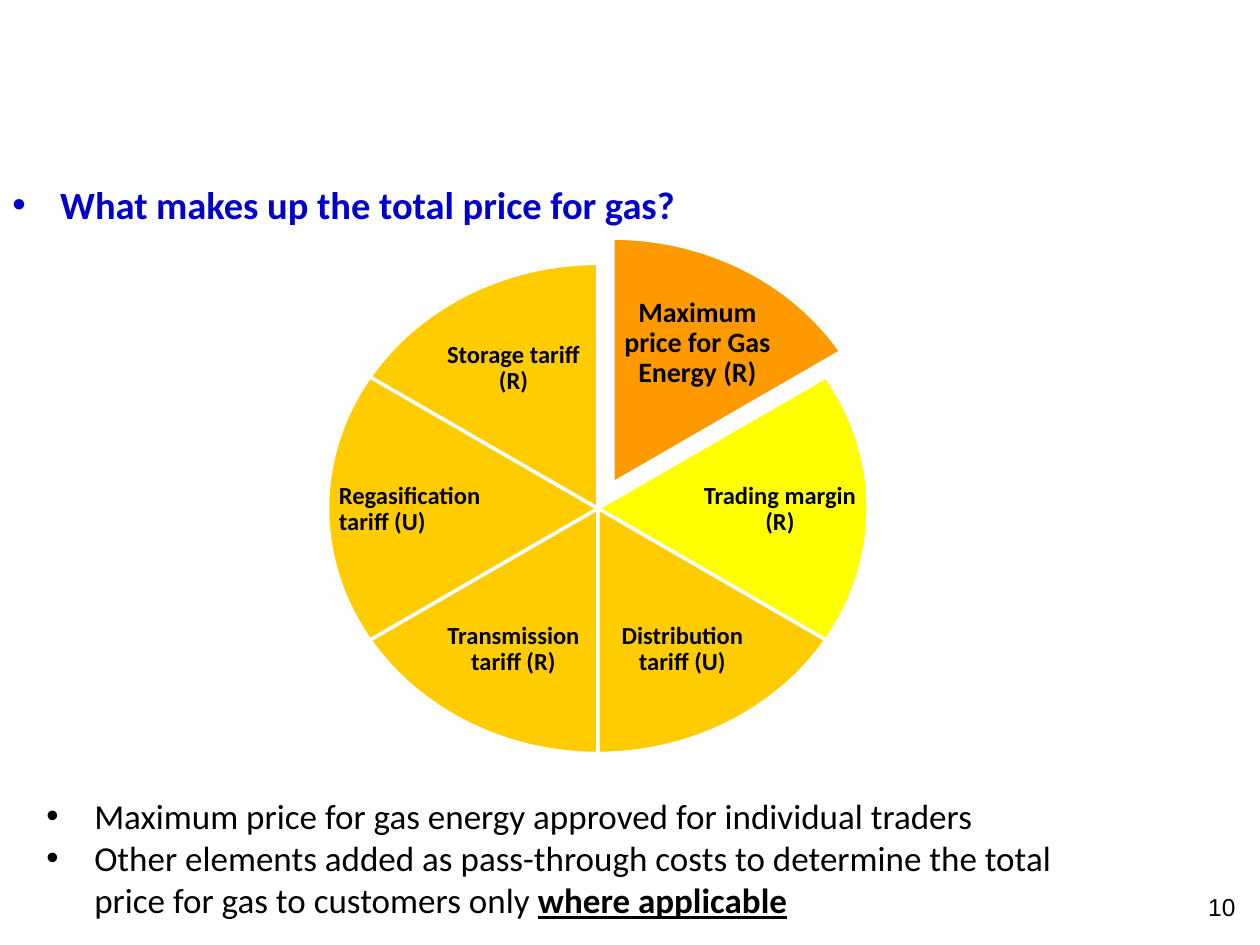
import pptx
import pptx.util
import pptx.dml.color
import pptx.enum.shapes
import pptx.enum.text
import pptx.oxml.ns
from lxml import etree

WIDTH, HEIGHT = pptx.util.Inches(10), pptx.util.Inches(7.5)
COLUMNS, ROWS = 100, 75
PIE = (26, 20.9, 42.9, 38.9)
SHIFT = (1.2, -2)
FIRST_ANGLE, SLICE_ANGLE, FULL_ANGLE = 162, 36, 216
CENTER = pptx.enum.text.PP_ALIGN.CENTER
LEFT = pptx.enum.text.PP_ALIGN.LEFT
GROW = pptx.enum.text.MSO_AUTO_SIZE.SHAPE_TO_FIT_TEXT
MIDDLE = pptx.enum.text.MSO_ANCHOR.MIDDLE

LEFT_HALF, RIGHT_HALF = 34.5, 47.9
UPPER, LOWER = 25.1, 47.4
CORNER, SIDE = (12.5, 8.3), (13, 7.9)
SLICES = [
    ("Maximum price for Gas Energy (R)", "FF9900", (RIGHT_HALF, UPPER), CORNER, 16, CENTER, SHIFT),
    ("Trading margin (R)", "FFFF00", (55.4, 36.5), SIDE, 14, CENTER, (0, 0)),
    ("Distribution tariff (U)", "FFCC00", (RIGHT_HALF, LOWER), CORNER, 14, CENTER, (0, 0)),
    ("Transmission tariff (R)", "FFCC00", (LEFT_HALF, LOWER), CORNER, 14, CENTER, (0, 0)),
    ("Regasification tariff (U)", "FFCC00", (26.7, 36.5), SIDE, 14, LEFT, (0, 0)),
    ("Storage tariff (R)", "FFCC00", (LEFT_HALF, UPPER), CORNER, 14, CENTER, (0, 0)),
]


def color(value):
    return pptx.dml.color.RGBColor.from_string(value)


def apply(target, formats):
    for name, value in formats.items():
        setattr(target, name, value)


def grid(left, top, width, height):
    across, down = WIDTH / COLUMNS, HEIGHT / ROWS
    return [round(length) for length in (left * across, top * down, width * across, height * down)]


def add_bullet(para):
    indent = pptx.util.Inches(0.38)
    properties = para._p.get_or_add_pPr()
    properties.set("marL", str(indent))
    properties.set("indent", str(-indent))
    font = etree.SubElement(properties, pptx.oxml.ns.qn("a:buFont"))
    font.set("typeface", "Arial")
    bullet = etree.SubElement(properties, pptx.oxml.ns.qn("a:buChar"))
    bullet.set("char", "•")


def add_text(shapes, place, paragraphs, size, hue="000000", font="Calibri",
             frame_formats=None, para_formats=None, bold=False, bullets=False):
    frame = shapes.add_textbox(*grid(*place)).text_frame
    apply(frame, {"word_wrap": True, **(frame_formats or {"auto_size": GROW})})
    for index, spans in enumerate(paragraphs):
        para = frame.add_paragraph() if index else frame.paragraphs[0]
        if bullets:
            add_bullet(para)
        apply(para, para_formats or {})
        for text, extra in spans:
            span = para.add_run()
            span.text = text
            apply(span.font, {"name": font, "size": pptx.util.Pt(size), "bold": bold, **extra})
            span.font.color.rgb = color(hue)


def add_slice(shapes, place, start, fill):
    wedge = shapes.add_shape(pptx.enum.shapes.MSO_SHAPE.PIE, *grid(*place))
    wedge.adjustments[0] = start
    wedge.adjustments[1] = (start + SLICE_ANGLE) % FULL_ANGLE
    wedge.shadow.inherit = False
    wedge.fill.solid()
    wedge.fill.fore_color.rgb = color(fill)
    wedge.line.color.rgb = color("FFFFFF")
    wedge.line.width = pptx.util.Pt(2)


def add_pie(page):
    shapes = page.shapes.add_group_shape().shapes
    inset = pptx.util.Inches(0.02)
    margins = {f"margin_{side}": inset for side in ("left", "top", "right", "bottom")}
    for index, (text, fill, corner, extent, size, align, (right, down)) in enumerate(SLICES):
        left, top, width, height = PIE
        start = (FIRST_ANGLE + index * SLICE_ANGLE) % FULL_ANGLE
        add_slice(shapes, (left + right, top + down, width, height), start, fill)
        add_text(shapes, (corner[0] + right, corner[1] + down, *extent), [[(text, {})]], size,
                 frame_formats={"vertical_anchor": MIDDLE, **margins},
                 para_formats={"alignment": align, "line_spacing": 0.9}, bold=True)


def main():
    deck = pptx.Presentation()
    apply(deck, {"slide_width": WIDTH, "slide_height": HEIGHT})
    page = deck.slides.add_slide(deck.slide_layouts[6])
    add_text(page.shapes, (94.9, 70.3, 5.1, 3.4), [[("10", {})]], 14, font="Arial")
    add_pie(page)
    notes = [
        [("Maximum price for gas energy approved for individual traders", {})],
        [("Other elements added as pass-through costs to determine the total "
          "price for gas to customers only ", {}),
         ("where applicable", {"bold": True, "underline": True})],
    ]
    add_text(page.shapes, (2.7, 62.6, 85.9, 11.1), notes, 20, bullets=True)
    add_text(page.shapes, (0, 13.9, 80.7, 4.7), [[("What makes up the total price for gas?", {})]],
             22, hue="0000CC", bold=True, bullets=True)
    deck.save("out.pptx")


if __name__ == "__main__":
    main()
